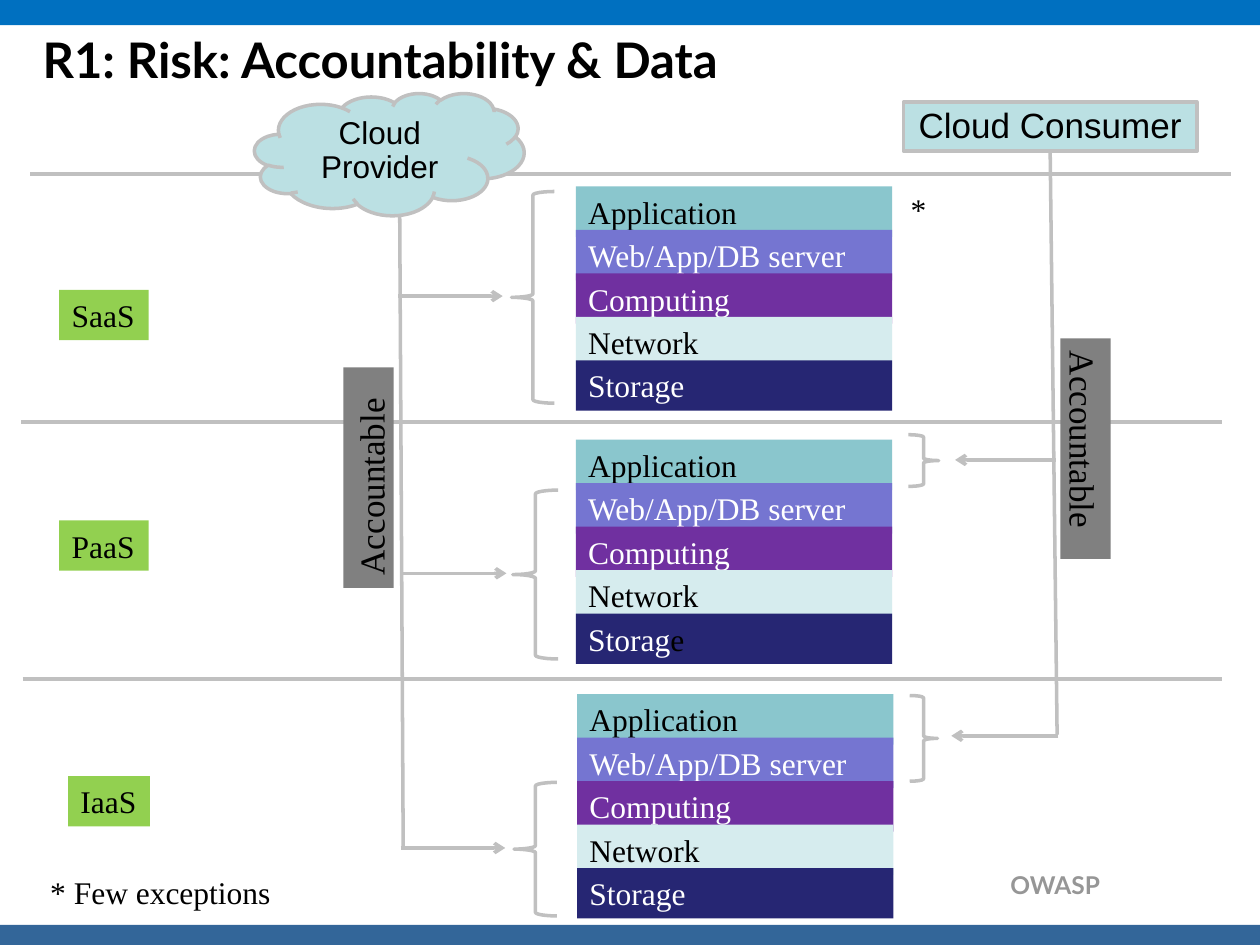
from lxml import etree
from pptx import Presentation
from pptx.dml.color import RGBColor
from pptx.enum.shapes import MSO_CONNECTOR, MSO_SHAPE
from pptx.enum.text import MSO_ANCHOR, PP_ALIGN
from pptx.oxml.ns import qn
from pptx.util import Inches, Pt

BLACK = RGBColor(0x00, 0x00, 0x00)
WHITE = RGBColor(0xFF, 0xFF, 0xFF)
SILVER = RGBColor(0xC0, 0xC0, 0xC0)
GRAY = RGBColor(0x80, 0x80, 0x80)
FOOTER_GRAY = RGBColor(0x96, 0x96, 0x96)
TOP_BLUE = RGBColor(0x00, 0x70, 0xC0)
BOTTOM_BLUE = RGBColor(0x33, 0x66, 0x99)
PALE_TEAL = RGBColor(0xBB, 0xE0, 0xE3)
GREEN = RGBColor(0x92, 0xD0, 0x50)

SERIF = "Times New Roman"
LAYERS = [
    ("Application", RGBColor(0x8A, 0xC6, 0xCD), BLACK),
    ("Web/App/DB server", RGBColor(0x75, 0x75, 0xD1), WHITE),
    ("Computing", RGBColor(0x70, 0x30, 0xA0), WHITE),
    ("Network", RGBColor(0xD6, 0xEC, 0xEE), BLACK),
    ("Storage", RGBColor(0x26, 0x26, 0x73), WHITE),
]


def write_text(shape, text, size, font=SERIF, color=BLACK, bold=False,
               align=PP_ALIGN.LEFT, anchor=MSO_ANCHOR.TOP, wrap=True):
    frame = shape.text_frame
    frame.word_wrap = wrap
    frame.vertical_anchor = anchor
    paragraph = frame.paragraphs[0]
    paragraph.text = text
    paragraph.alignment = align
    paragraph.font.size = Pt(size)
    paragraph.font.name = font
    paragraph.font.bold = bold
    paragraph.font.color.rgb = color
    return paragraph


def add_box(slide, box, fill=None, outlined=False, kind=MSO_SHAPE.RECTANGLE):
    shape = slide.shapes.add_shape(kind, *map(Inches, box))
    shape.shadow.inherit = False
    if fill is None:
        shape.fill.background()
    else:
        shape.fill.solid()
        shape.fill.fore_color.rgb = fill
    if outlined:
        shape.line.color.rgb = SILVER
        shape.line.width = Pt(2)
    else:
        shape.line.fill.background()
    return shape


def add_label(slide, box, text, size, **style):
    return write_text(slide.shapes.add_textbox(*map(Inches, box)), text, size, **style)


def add_line(slide, start, end, arrow=False):
    line = slide.shapes.add_connector(
        MSO_CONNECTOR.STRAIGHT, *map(Inches, (*start, *end)))
    line.line.color.rgb = SILVER
    line.line.width = Pt(2)
    if arrow:
        etree.SubElement(line.line._get_or_add_ln(), qn("a:tailEnd"), type="arrow")
    etree.SubElement(line._element.spPr, qn("a:effectLst"))
    return line


def add_brace(slide, box, rotation=0):
    brace = add_box(slide, box, outlined=True, kind=MSO_SHAPE.LEFT_BRACE)
    brace.rotation = rotation


def add_frame(slide):
    # Bars, title and footer
    add_box(slide, (0, 0, 10, 0.2), TOP_BLUE)
    add_box(slide, (0, 7.34, 10, 0.17), BOTTOM_BLUE)
    add_label(slide, (6.22, 6.86, 2.61, 0.33), "OWASP", 14, font="Lato",
              color=FOOTER_GRAY, bold=True, align=PP_ALIGN.RIGHT)
    add_label(slide, (0.24, 0.1, 9.76, 0.65), "R1: Risk: Accountability & Data", 28,
              font="Lato", bold=True, anchor=MSO_ANCHOR.BOTTOM)


def add_stack(slide, left, top, split_last=False):
    pitch = 0.345
    for index, (name, fill, color) in enumerate(LAYERS):
        layer = add_box(slide, (left, top + index * pitch, 2.51, 0.4), fill)
        paragraph = write_text(layer, name, 18, color=color)
    if split_last:
        # The final letter of the last layer is black
        first = paragraph.runs[0]
        first.text = name[:-1]
        first.font.color.rgb = color
        last = paragraph.add_run()
        last.text = name[-1]
        last.font.color.rgb = BLACK


def add_service(slide, name, tag_box, stack, brace, split_last=False):
    add_stack(slide, *stack, split_last=split_last)
    write_text(add_box(slide, tag_box, GREEN), name, 18, wrap=False)
    add_brace(slide, brace)


def add_accountable(slide, box, rotation):
    bar = add_box(slide, box, GRAY)
    bar.rotation = rotation
    write_text(bar, "Accountable", 20)


def add_party(slide, box, text, size, kind):
    party = add_box(slide, box, PALE_TEAL, outlined=True, kind=kind)
    frame = party.text_frame
    frame.margin_left = frame.margin_right = Inches(0.09)
    frame.margin_top = frame.margin_bottom = Inches(0.04)
    paragraph = write_text(party, text, size, font="Arial",
                           align=PP_ALIGN.CENTER, anchor=MSO_ANCHOR.MIDDLE)
    paragraph.line_spacing = 0.9
    return party


def add_consumer(slide, box):
    consumer = add_party(slide, box, "Cloud Consumer", 20, MSO_SHAPE.RECTANGLE)
    trunk = add_line(slide, (8.35, 1.2), (8.39, 5.83))
    trunk.begin_connect(consumer, 2)
    add_line(slide, (8.38, 3.65), (7.58, 3.65), arrow=True)
    add_line(slide, (8.4, 5.84), (7.55, 5.84), arrow=True)
    add_brace(slide, (7.21, 3.45, 0.24, 0.41), 180)
    add_brace(slide, (7.22, 5.52, 0.22, 0.68), 180)
    add_accountable(slide, (7.74, 3.36, 1.75, 0.4), 90)


def add_provider(slide, box):
    add_line(slide, (3.17, 1.22), (3.2, 6.72))
    for left, y in ((3.16, 2.35), (3.19, 4.55), (3.18, 6.73)):
        add_line(slide, (left, y), (left + 0.83, y), arrow=True)
    add_accountable(slide, (2.05, 3.59, 1.75, 0.4), 270)
    add_party(slide, box, "Cloud Provider", 18, MSO_SHAPE.CLOUD)


def main():
    presentation = Presentation()
    presentation.slide_width = Inches(10)
    presentation.slide_height = Inches(7.5)
    slide = presentation.slides.add_slide(presentation.slide_layouts[6])

    add_frame(slide)

    # Row dividers
    for left, right, y in ((0.24, 9.77, 1.38), (0.17, 9.7, 3.35), (0.18, 9.7, 5.39)):
        add_line(slide, (left, y), (right, y))

    # Service models
    add_service(slide, "SaaS", (0.47, 2.3, 0.71, 0.4), (4.57, 1.48),
                (4.06, 1.52, 0.34, 1.68))
    add_service(slide, "PaaS", (0.47, 4.13, 0.71, 0.4), (4.57, 3.49),
                (4.07, 3.89, 0.36, 1.34), split_last=True)
    add_service(slide, "IaaS", (0.54, 6.16, 0.65, 0.4), (4.58, 5.51),
                (4.08, 6.21, 0.34, 1.06))

    # Exception mark and its note
    add_label(slide, (7.13, 1.46, 0.33, 0.46), "*", 18, wrap=False)
    add_label(slide, (0.3, 6.88, 2.12, 0.37), "* Few exceptions", 18)

    # Accountable parties
    add_consumer(slide, (7.17, 0.81, 2.33, 0.39))
    add_provider(slide, (2.02, 0.74, 2.14, 0.97))

    presentation.save("out.pptx")


if __name__ == "__main__":
    main()
